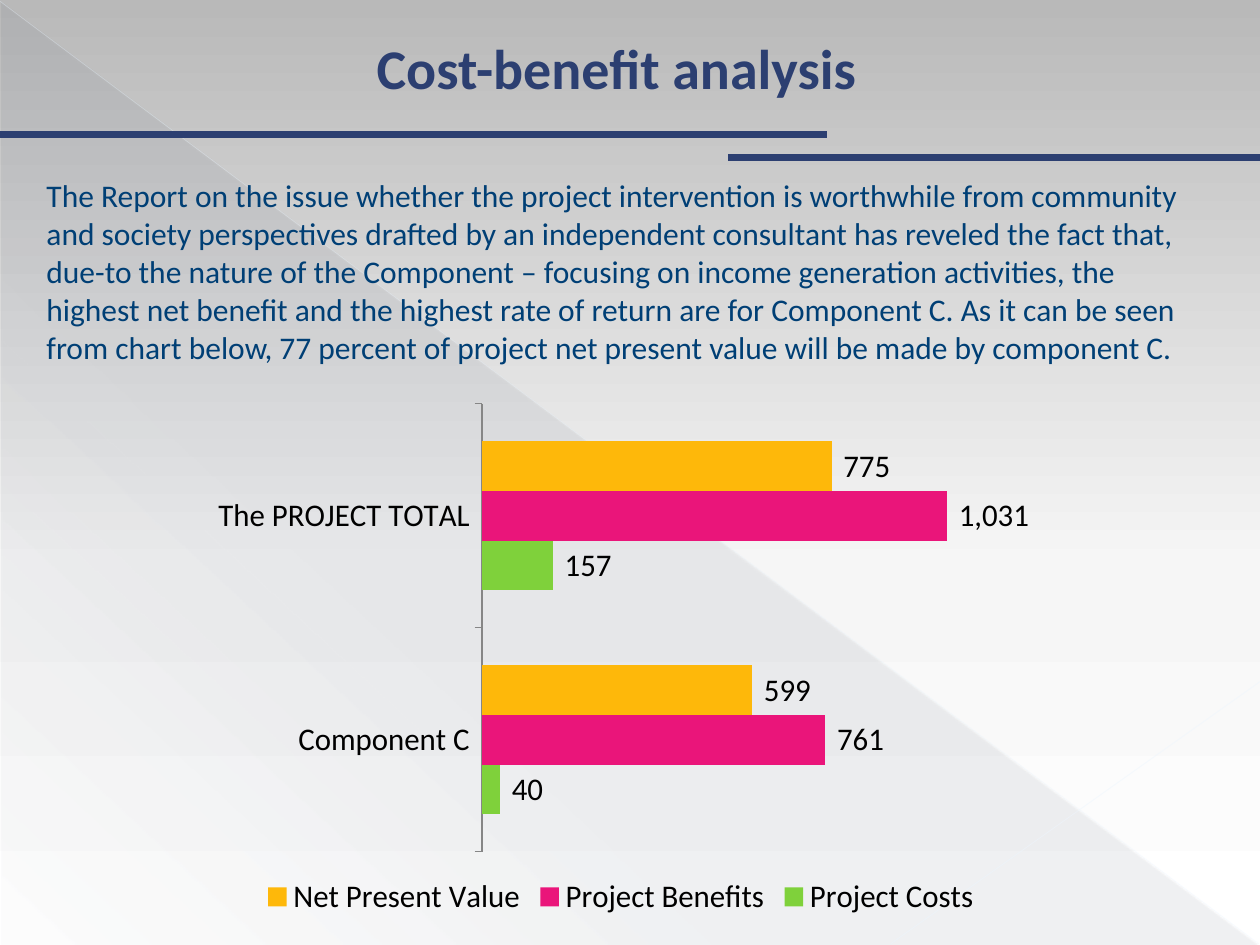
from lxml.etree import SubElement
from pptx import Presentation
from pptx.chart.data import CategoryChartData
from pptx.dml.color import RGBColor
from pptx.enum.chart import XL_CHART_TYPE, XL_LABEL_POSITION, XL_LEGEND_POSITION, XL_TICK_MARK
from pptx.enum.shapes import MSO_CONNECTOR, MSO_SHAPE
from pptx.enum.text import MSO_AUTO_SIZE
from pptx.oxml.ns import qn
from pptx.util import Inches, Pt

FONT = "Calibri"
COLORS = {
    "navy": "2C3F71", "body": "003F75", "black": "000000", "axis": "868686",
    "slate": "4E5B6F", "ray": "EAF5FF", "pale_ray": "ECF6FF",
    "top": "B9B9B9", "middle": "F6F6F6", "bottom": "FFFFFF",
    "costs": "7FD13B", "benefits": "EA157A", "net": "FEB80A",
}
TITLE = "Cost-benefit analysis"
FINDING = (
    "The Report on the issue whether the project intervention is worthwhile from "
    "community and society perspectives drafted by an independent consultant has "
    "reveled the fact that, due-to the nature of the Component – focusing on income "
    "generation activities, the highest net benefit and the highest rate of return "
    "are for Component C. As it can be seen from chart below, 77 percent of project "
    "net present value will be made by component C."
)
CATEGORIES = ["Component C", "The PROJECT TOTAL"]
SERIES = [
    ("Project Costs", (40, 157), "costs"),
    ("Project Benefits", (761, 1031), "benefits"),
    ("Net Present Value", (599, 775), "net"),
]
NUMBER_FORMAT = '_-* #,##0_р_._-;\\-* #,##0_р_._-;_-* "-"?'
# start, end, colour, width in points, opacity in percent
RAYS = [
    ((0, 0.01), (9.99, 7.49), "ray", 0.39, 35),
    ((10, 5.41), (7.07, 7.49), "pale_ray", 0.47, 45),
]
RULES = [
    ((0, 1.07), (6.56, 1.07), "navy", 4, 100),
    ((5.78, 1.25), (10, 1.25), "navy", 4, 100),
]


def rgb(name):
    return RGBColor.from_string(COLORS[name])


def set_opacity(color_element, percent):
    if percent < 100:
        SubElement(color_element, qn("a:alpha"), val=str(percent * 1000))


def set_gradient(fill, owner, clockwise_angle, stops):
    """Fill with (position, colour, opacity) stops; owner is the XML holding the fill."""
    fill.gradient()
    fill.gradient_angle = 360 - clockwise_angle
    stop_list = next(owner.iter(qn("a:gsLst")))
    for old_stop in list(stop_list):
        stop_list.remove(old_stop)
    for position, color, opacity in stops:
        stop = SubElement(stop_list, qn("a:gs"), pos=str(position * 1000))
        set_opacity(SubElement(stop, qn("a:srgbClr"), val=COLORS[color]), opacity)


def add_line(slide, start, end, color, width, opacity):
    line = slide.shapes.add_connector(
        MSO_CONNECTOR.STRAIGHT, *(Inches(v) for v in start + end))
    line.line.color.rgb = rgb(color)
    line.line.width = Pt(width)
    properties = line.element.spPr
    set_opacity(next(properties.iter(qn("a:srgbClr"))), opacity)
    SubElement(properties, qn("a:effectLst"))


def format_font(font, size=18, color="black", bold=False):
    font.name, font.size, font.bold = FONT, Pt(size), bold
    font.color.rgb = rgb(color)


def add_text(slide, text, box, wrap=True, **style):
    frame = slide.shapes.add_textbox(*(Inches(v) for v in box)).text_frame
    frame.word_wrap = wrap
    frame.auto_size = MSO_AUTO_SIZE.SHAPE_TO_FIT_TEXT
    run = frame.paragraphs[0].add_run()
    run.text = text
    format_font(run.font, **style)


def add_value_chart(slide, box):
    data = CategoryChartData(number_format=NUMBER_FORMAT)
    data.categories = CATEGORIES
    for name, values, _ in SERIES:
        data.add_series(name, values)
    chart = slide.shapes.add_chart(
        XL_CHART_TYPE.BAR_CLUSTERED, *(Inches(v) for v in box), data).chart
    format_font(chart.font)
    chart.has_title = False
    chart.has_legend = True
    chart.legend.position = XL_LEGEND_POSITION.BOTTOM
    chart.legend.include_in_layout = False

    chart.value_axis.visible = False
    chart.value_axis.has_major_gridlines = False
    chart.value_axis.minimum_scale = 0
    chart.category_axis.major_tick_mark = XL_TICK_MARK.OUTSIDE
    chart.category_axis.format.line.color.rgb = rgb("axis")
    chart.category_axis.format.line.width = Pt(0.75)

    plot = chart.plots[0]
    plot.gap_width = 150
    plot.vary_by_categories = False
    for series, (_, _, color) in zip(plot.series, SERIES):
        series.format.fill.solid()
        series.format.fill.fore_color.rgb = rgb(color)
        labels = series.data_labels
        labels.show_value = True
        labels.number_format = NUMBER_FORMAT
        labels.number_format_is_linked = False
        labels.position = XL_LABEL_POSITION.OUTSIDE_END


def main():
    deck = Presentation()
    deck.slide_width, deck.slide_height = Inches(10), Inches(7.5)
    slide = deck.slides.add_slide(deck.slide_layouts[6])
    set_gradient(slide.background.fill, slide.element, 90,
                 [(0, "top", 100), (60, "middle", 100), (100, "bottom", 100)])

    corner = slide.shapes.add_shape(
        MSO_SHAPE.RIGHT_TRIANGLE, Inches(0.01), Inches(0.02), Inches(9.98), Inches(7.48))
    corner.shadow.inherit = False
    corner.line.fill.background()
    set_gradient(corner.fill, corner.element, 133,
                 [(0, "slate", 10), (70, "slate", 8), (100, "slate", 1)])

    for line in RAYS + RULES:
        add_line(slide, *line)
    add_text(slide, TITLE, (2.89, 0.22, 4.15, 0.64),
             wrap=False, size=32, color="navy", bold=True)
    add_text(slide, FINDING, (0.27, 1.35, 9.45, 1.62), color="body")
    add_value_chart(slide, (1.6, 3.12, 6.79, 4.2))
    deck.save("out.pptx")


if __name__ == "__main__":
    main()
